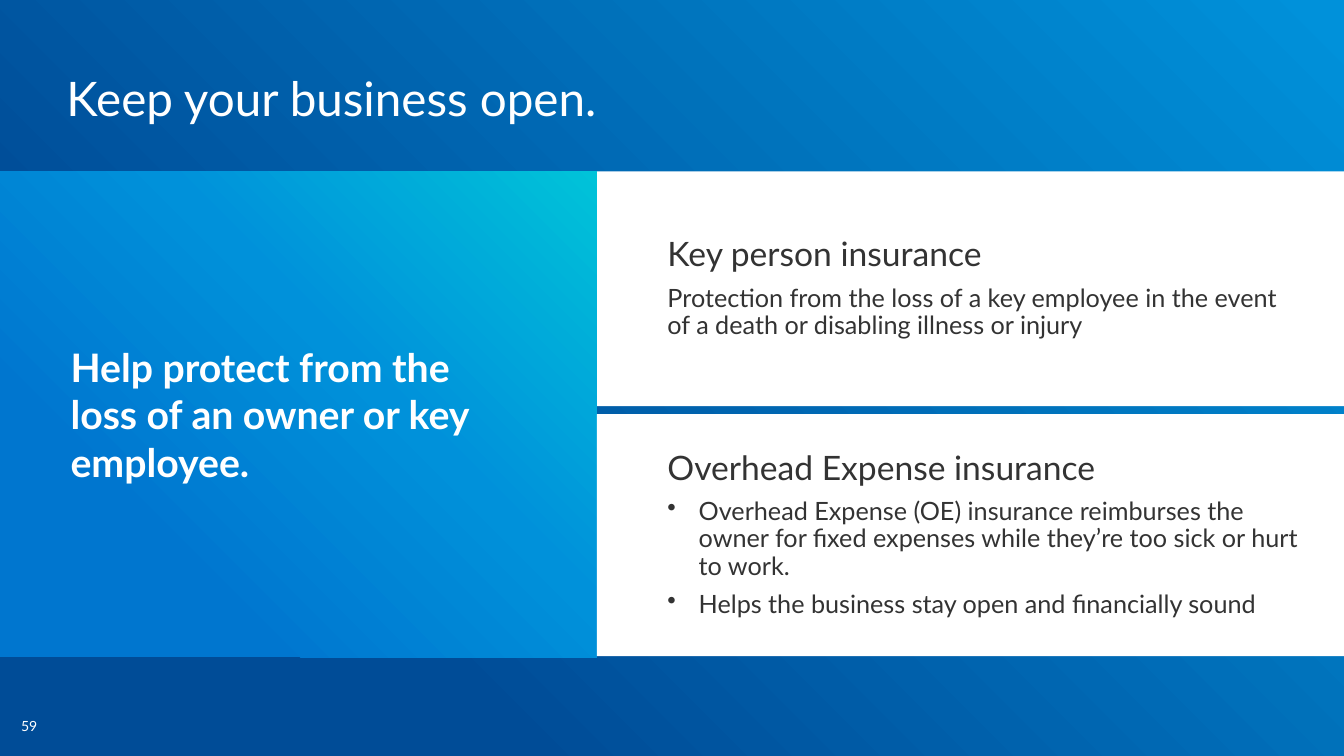
from dataclasses import dataclass

from lxml.etree import SubElement
from pptx import Presentation
from pptx.dml.color import RGBColor
from pptx.enum.shapes import MSO_SHAPE
from pptx.enum.text import MSO_ANCHOR, PP_ALIGN
from pptx.oxml.ns import qn
from pptx.util import Inches, Pt


@dataclass(frozen=True)
class Theme:
    font: str = "Lato"
    white: str = "FFFFFF"
    ink: str = "333333"
    backdrop: tuple = ((25, "004C97"), (99, "0091DA"))
    accent: tuple = ((25, "0076CF"), (60, "0091DA"), (100, "00C3D9"))
    title: int = 34
    callout: int = 28
    heading: int = 24
    body: int = 18
    number: int = 10


THEME = Theme()
WIDTH, HEIGHT = 13.33, 7.5
SPLIT, TOP = 5.92, 1.7
CARD_INSETS = (0.7, 0.4, 0.4, 0.4)


def set_attrs(target, values):
    """Set every attribute named in a dict of format values."""
    for name, value in values.items():
        setattr(target, name, value)


def format_frame(tf, anchor, insets):
    """Set wrapping, anchor and the left, top, right and bottom insets."""
    sides = ("margin_left", "margin_top", "margin_right", "margin_bottom")
    margins = {side: Inches(inset) for side, inset in zip(sides, insets)}
    set_attrs(tf, {"word_wrap": True, "vertical_anchor": anchor, **margins})


def add_bullet(p):
    """Give a paragraph a hanging bullet."""
    pPr = p._p.get_or_add_pPr()
    pPr.set("marL", str(Inches(0.31)))
    pPr.set("indent", str(-Inches(0.31)))
    SubElement(pPr, qn("a:buChar")).set("char", "•")


def write_line(p, text, size, color, bold=False):
    """Write one left-aligned run into a paragraph."""
    p.alignment = PP_ALIGN.LEFT
    r = p.add_run()
    r.text = text
    set_attrs(r.font, {"name": THEME.font, "size": Pt(size), "bold": bold})
    r.font.color.rgb = RGBColor.from_string(color)


def add_label(s, box, text, size, anchor=MSO_ANCHOR.TOP):
    """Add a white text box without insets."""
    tf = s.shapes.add_textbox(*map(Inches, box)).text_frame
    format_frame(tf, anchor, (0, 0, 0, 0))
    write_line(tf.paragraphs[0], text, size, THEME.white)


def add_panel(s, box):
    """Add a rectangle without line or shadow."""
    sp = s.shapes.add_shape(MSO_SHAPE.RECTANGLE, *map(Inches, box))
    sp.line.fill.background()
    sp.shadow.inherit = False
    return sp


def add_gradient_panel(s, box, stops):
    """Add a rectangle with a gradient rising to the top right."""
    sp = add_panel(s, box)
    sp.fill.gradient()
    sp.fill.gradient_angle = 45
    gsLst = sp._element.spPr.find(qn("a:gradFill")).find(qn("a:gsLst"))
    for gs in list(gsLst):
        gsLst.remove(gs)
    for percent, color in stops:
        gs = SubElement(gsLst, qn("a:gs"), pos=str(percent * 1000))
        SubElement(gs, qn("a:srgbClr"), val=color)
    return sp


def add_card(s, top, height, heading, lines, bulleted=False):
    """Add a white card with a heading and body lines."""
    sp = add_panel(s, (SPLIT, top, WIDTH - SPLIT, height))
    sp.fill.solid()
    sp.fill.fore_color.rgb = RGBColor.from_string(THEME.white)
    tf = sp.text_frame
    format_frame(tf, MSO_ANCHOR.MIDDLE, CARD_INSETS)
    write_line(tf.paragraphs[0], heading, THEME.heading, THEME.ink)
    for line in lines:
        p = tf.add_paragraph()
        if bulleted:
            add_bullet(p)
        write_line(p, line, THEME.body, THEME.ink)
    for p in tf.paragraphs:
        set_attrs(p, {"line_spacing": 0.9, "space_after": Pt(8)})


def add_callout(s, box, text):
    """Add the gradient panel with its bold message."""
    tf = add_gradient_panel(s, box, THEME.accent).text_frame
    format_frame(tf, MSO_ANCHOR.MIDDLE, (0.7, 0.05, 0.9, 0.05))
    write_line(tf.paragraphs[0], text, THEME.callout, THEME.white, bold=True)


def main():
    """Build the slide and save it."""
    prs = Presentation()
    set_attrs(prs, {"slide_width": Inches(WIDTH), "slide_height": Inches(HEIGHT)})
    s = prs.slides.add_slide(prs.slide_layouts[6])
    add_gradient_panel(s, (0, 0, WIDTH, HEIGHT), THEME.backdrop)
    add_label(s, (0.21, 6.88, 0.46, 0.41), "59", THEME.number, MSO_ANCHOR.BOTTOM)
    add_label(s, (0.66, 0.68, 12, 0.5), "Keep your business open.", THEME.title)
    add_card(s, TOP, 2.33, "Key person insurance", [
        "Protection from the loss of a key employee in the event of a death "
        "or disabling illness or injury",
    ])
    add_callout(s, (0, TOP, SPLIT, 4.82),
                "Help protect from the loss of an owner or key employee.")
    add_card(s, 4.11, 2.4, "Overhead Expense insurance", [
        "Overhead Expense (OE) insurance reimburses the owner for fixed "
        "expenses while they’re too sick or hurt to work.",
        "Helps the business stay open and financially sound",
    ], bulleted=True)
    prs.save("out.pptx")


if __name__ == "__main__":
    main()
